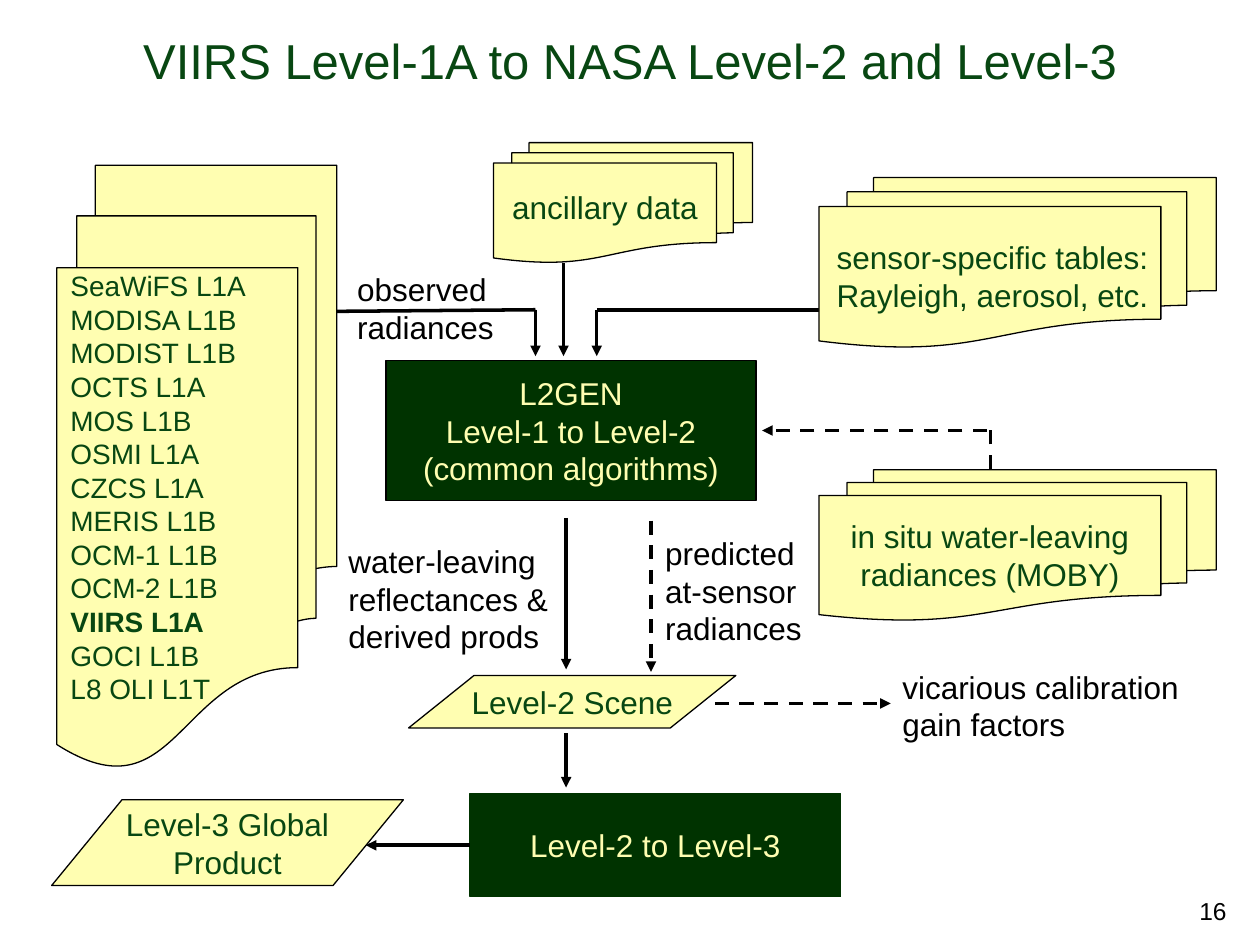
from lxml.etree import SubElement
from pptx import Presentation
from pptx.dml.color import RGBColor
from pptx.enum.dml import MSO_LINE
from pptx.enum.shapes import MSO_CONNECTOR, MSO_SHAPE
from pptx.enum.text import MSO_ANCHOR, PP_ALIGN
from pptx.oxml.ns import qn
from pptx.util import Pt

COLORS = {
    "cream": "FFFEB1",
    "dark": "003300",
    "green": "084712",
    "black": "000000",
}
SENSORS = [
    "SeaWiFS L1A", "MODISA L1B", "MODIST L1B", "OCTS L1A", "MOS L1B",
    "OSMI L1A", "CZCS L1A", "MERIS L1B", "OCM-1 L1B", "OCM-2 L1B",
    "VIIRS L1A", "GOCI L1B", "L8 OLI L1T",
]


def color(name):
    return RGBColor.from_string(COLORS[name])


def write_text(shape, text, size=18, ink="black", align=PP_ALIGN.LEFT,
               anchor=MSO_ANCHOR.TOP, wrap=False, bold_line=None):
    frame = shape.text_frame
    frame.word_wrap = wrap
    frame.vertical_anchor = anchor
    for index, line in enumerate(text.split("\n")):
        paragraph = frame.paragraphs[0] if index == 0 else frame.add_paragraph()
        paragraph.alignment = align
        run = paragraph.add_run()
        run.text = line
        run.font.name = "Arial"
        run.font.size = Pt(size)
        run.font.bold = line == bold_line
        run.font.color.rgb = color(ink)


def add_label(slide, box, text, **text_format):
    label = slide.shapes.add_textbox(*map(Pt, box))
    write_text(label, text, **text_format)


def add_block(slide, kind, box, text="", fill="cream", line="black", ink="green"):
    shape = slide.shapes.add_shape(kind, *map(Pt, box))
    shape.shadow.inherit = False
    shape.fill.solid()
    shape.fill.fore_color.rgb = color(fill)
    shape.line.color.rgb = color(line)
    shape.line.width = Pt(0.75)
    if text:
        write_text(shape, text, ink=ink, align=PP_ALIGN.CENTER,
                   anchor=MSO_ANCHOR.MIDDLE)
    return shape


def add_flow(slide, start, end, arrow=True, dashed=False):
    connector = slide.shapes.add_connector(
        MSO_CONNECTOR.STRAIGHT, *map(Pt, (*start, *end)))
    connector.line.color.rgb = color("black")
    connector.line.width = Pt(2)
    if dashed:
        connector.line.dash_style = MSO_LINE.DASH
    if arrow:
        SubElement(connector.line._get_or_add_ln(), qn("a:tailEnd"), type="triangle")
    SubElement(connector._element.spPr, qn("a:effectLst"))
    return connector


def add_title(slide, box):
    add_label(slide, box, "VIIRS Level-1A to NASA Level-2 and Level-3", size=28,
              ink="green", align=PP_ALIGN.CENTER, anchor=MSO_ANCHOR.MIDDLE,
              wrap=True)


def add_processing(slide, box):
    left, top, width, height = box
    middle = top + height / 2
    right = left + width
    flow_top = top - 29
    add_block(slide, MSO_SHAPE.RECTANGLE, box,
              "L2GEN\nLevel-1 to Level-2\n(common algorithms)",
              fill="dark", ink="cream")
    add_flow(slide, (left - 38, flow_top + 1), (left + 85.5, flow_top), arrow=False)
    add_flow(slide, (right + 46, flow_top), (left + 120.5, flow_top), arrow=False)
    for offset, start in ((85.5, flow_top), (101.5, top - 55.5), (120.5, flow_top)):
        add_flow(slide, (left + offset, start), (left + offset, top - 2.5))
    add_flow(slide, (right + 134, top + 62), (right + 134, middle),
             arrow=False, dashed=True)
    add_flow(slide, (right + 132, middle), (right + 3.5, middle), dashed=True)
    add_label(slide, (left - 23.5, top - 55, 98, 45), "observed\nradiances")


def add_document_stack(slide, box, text, text_box, **text_format):
    left, top = box[:2]
    add_block(slide, MSO_SHAPE.FLOWCHART_MULTIDOCUMENT, box)
    add_label(slide, (left + text_box[0], top + text_box[1], *text_box[2:]),
              text, ink="green", **text_format)


def add_inputs(slide, box):
    left, top = box[:2]
    table_left = left + 435.5
    add_document_stack(slide, (left, top + 13, 160, 344), "\n".join(SENSORS),
                       (0.7, 55.5, 120, 259), size=16, bold_line="VIIRS L1A")
    add_document_stack(slide, (left + 249.5, top, 148, 68.5), "ancillary data",
                       (3.5, 22.5, 126, 26))
    add_document_stack(slide, (table_left, top + 20, 227, 97),
                       "sensor-specific tables:\nRayleigh, aerosol, etc.",
                       (3, 31, 198, 45))
    add_block(slide, MSO_SHAPE.FLOWCHART_MULTIDOCUMENT,
              (table_left, top + 187, 227, 86),
              "in situ water-leaving\nradiances (MOBY)")


def add_products(slide, box):
    left, top = box[:2]
    main_flow = left + 294
    check_flow = left + 342.5
    scene_top = top + 90
    add_flow(slide, (main_flow, top), (main_flow, top + 86.5))
    add_flow(slide, (check_flow, top + 1.5), (check_flow, top + 88), dashed=True)
    add_label(slide, (left + 162.5, top + 10, 140, 73),
              "water-leaving\nreflectances &\nderived prods")
    add_label(slide, (left + 343.5, top + 5.5, 98, 65),
              "predicted\nat-sensor\nradiances")
    add_block(slide, MSO_SHAPE.FLOWCHART_DATA, (left + 204, scene_top, 187, 30),
              "Level-2 Scene")
    add_flow(slide, (left + 379, scene_top + 16), (left + 479.5, scene_top + 16),
             dashed=True)
    add_label(slide, (left + 479, scene_top - 8, 178, 45),
              "vicarious calibration\ngain factors")
    add_flow(slide, (main_flow, scene_top + 33), (main_flow, scene_top + 64))
    binning = add_block(slide, MSO_SHAPE.RECTANGLE,
                        (left + 239, top + 157.5, 212, 59), "Level-2 to Level-3",
                        fill="dark", line="dark", ink="cream")
    add_block(slide, MSO_SHAPE.FLOWCHART_DATA, (left, top + 161, 201, 49),
              "Level-3 Global\nProduct")
    output = add_flow(slide, (left + 239, top + 187), (left + 179.5, top + 187))
    output.begin_connect(binning, 1)


def add_page_number(slide, box):
    add_label(slide, box, "16", size=14, align=PP_ALIGN.RIGHT, wrap=True)


def main():
    presentation = Presentation()
    presentation.slide_width = Pt(720)
    presentation.slide_height = Pt(540)
    slide = presentation.slides.add_slide(presentation.slide_layouts[6])
    add_title(slide, (6, 9, 708, 50))
    add_processing(slide, (220.5, 206, 211.5, 80))
    add_inputs(slide, (32.5, 81.5, 662.5, 357))
    add_products(slide, (29.5, 296, 657, 217))
    add_page_number(slide, (540, 508.5, 168, 31))
    presentation.save("out.pptx")


if __name__ == "__main__":
    main()
